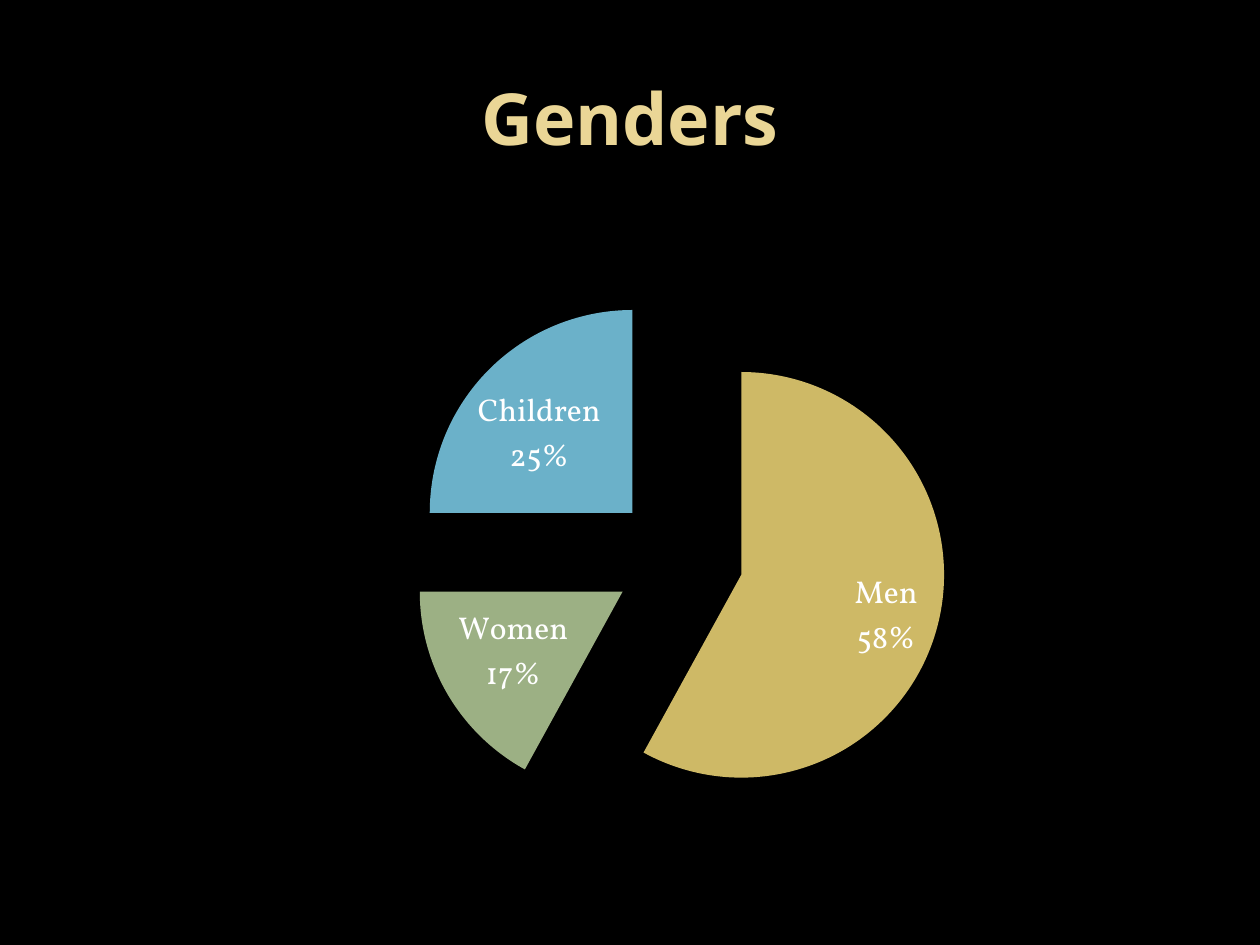
from lxml import etree
from pptx import Presentation
from pptx.chart.data import CategoryChartData
from pptx.dml.color import RGBColor
from pptx.enum.chart import XL_CHART_TYPE, XL_LABEL_POSITION
from pptx.enum.text import MSO_ANCHOR, PP_ALIGN
from pptx.oxml.ns import qn
from pptx.util import Inches, Pt

PIE = XL_CHART_TYPE.PIE
BEST_FIT = XL_LABEL_POSITION.BEST_FIT
MIDDLE = MSO_ANCHOR.MIDDLE
CENTER = PP_ALIGN.CENTER

SLICES = [("Men", 58, "CEB966"), ("Women", 17, "9CB084"), ("Children", 25, "6BB1C9")]
CHART_WIDTH, CHART_HEIGHT = Inches(9), Inches(5.15)
PLOT_LEFT, PLOT_TOP, PLOT_SIZE = Inches(2.76), Inches(0.56), Inches(4.25)
EXPLOSION = 32


def set_fill(fill, color):
    """Give a fill one solid hex colour."""
    fill.solid()
    fill.fore_color.rgb = RGBColor.from_string(color)


def style_font(font, name, size, color, bold=False):
    """Set the typeface, size, colour and weight of a font."""
    font.name = name
    font.size = Pt(size)
    font.bold = bold
    set_fill(font.fill, color)


def format_title(slide, text):
    """Place and format the title placeholder."""
    title = slide.shapes.title
    title.left, title.top = Inches(0.5), Inches(0.3)
    title.width, title.height = Inches(9), Inches(1.25)
    title.text_frame.text = text
    title.text_frame.vertical_anchor = MIDDLE
    paragraph = title.text_frame.paragraphs[0]
    paragraph.alignment = CENTER
    style_font(paragraph.runs[0].font, "Open Sans", 41, "EAD696", bold=True)


def set_plot_layout(chart):
    """Fix the square inner plot area within the chart."""
    plot_area = chart.element.find(".//" + qn("c:plotArea"))
    for old_layout in plot_area.findall(qn("c:layout")):
        plot_area.remove(old_layout)
    layout = etree.Element(qn("c:layout"))
    manual = etree.SubElement(layout, qn("c:manualLayout"))
    settings = {
        "layoutTarget": "inner",
        "xMode": "edge",
        "yMode": "edge",
        "x": PLOT_LEFT / CHART_WIDTH,
        "y": PLOT_TOP / CHART_HEIGHT,
        "w": PLOT_SIZE / CHART_WIDTH,
        "h": PLOT_SIZE / CHART_HEIGHT,
    }
    for name, value in settings.items():
        etree.SubElement(manual, qn("c:" + name)).set("val", str(value))
    plot_area.insert(0, layout)


def explode_slices(series, percent):
    """Move every slice of the series away from the centre."""
    explosion = etree.Element(qn("c:explosion"))
    explosion.set("val", str(percent))
    series.format.element.find(qn("c:spPr")).addnext(explosion)


def format_labels(plot):
    """Show category and percentage on two lines inside each slice."""
    plot.has_data_labels = True
    labels = plot.data_labels
    labels.show_value = False
    labels.show_category_name = True
    labels.show_percentage = True
    labels.number_format = "0%"
    labels.number_format_is_linked = False
    labels.position = BEST_FIT
    style_font(labels.font, "Vollkorn", 18, "FFFFFF")
    separator = etree.Element(qn("c:separator"))
    separator.text = "\n"
    label_element = plot._element.find(qn("c:dLbls"))
    label_element.find(qn("c:showBubbleSize")).addnext(separator)


def add_pie(slide):
    """Add the exploded pie chart."""
    data = CategoryChartData()
    data.categories = [name for name, _, _ in SLICES]
    data.add_series("Series 1", [value for _, value, _ in SLICES])
    chart = slide.shapes.add_chart(
        PIE, Inches(0.5), Inches(1.75), CHART_WIDTH, CHART_HEIGHT, data
    ).chart
    chart.has_title = False
    chart.has_legend = False
    style_font(chart.font, "Vollkorn", 18, "FFFFFF")
    set_plot_layout(chart)
    plot = chart.plots[0]
    plot.vary_by_categories = True
    series = plot.series[0]
    series.format.line.fill.background()
    explode_slices(series, EXPLOSION)
    for index, (_, _, color) in enumerate(SLICES):
        point_format = series.points[index].format
        set_fill(point_format.fill, color)
        point_format.line.fill.background()
    format_labels(plot)


def main():
    """Build and save the slide."""
    presentation = Presentation()
    presentation.slide_width, presentation.slide_height = Inches(10), Inches(7.5)
    slide = presentation.slides.add_slide(presentation.slide_layouts.get_by_name("Title Only"))
    set_fill(slide.background.fill, "000000")
    format_title(slide, "Genders")
    add_pie(slide)
    presentation.save("out.pptx")


if __name__ == "__main__":
    main()
